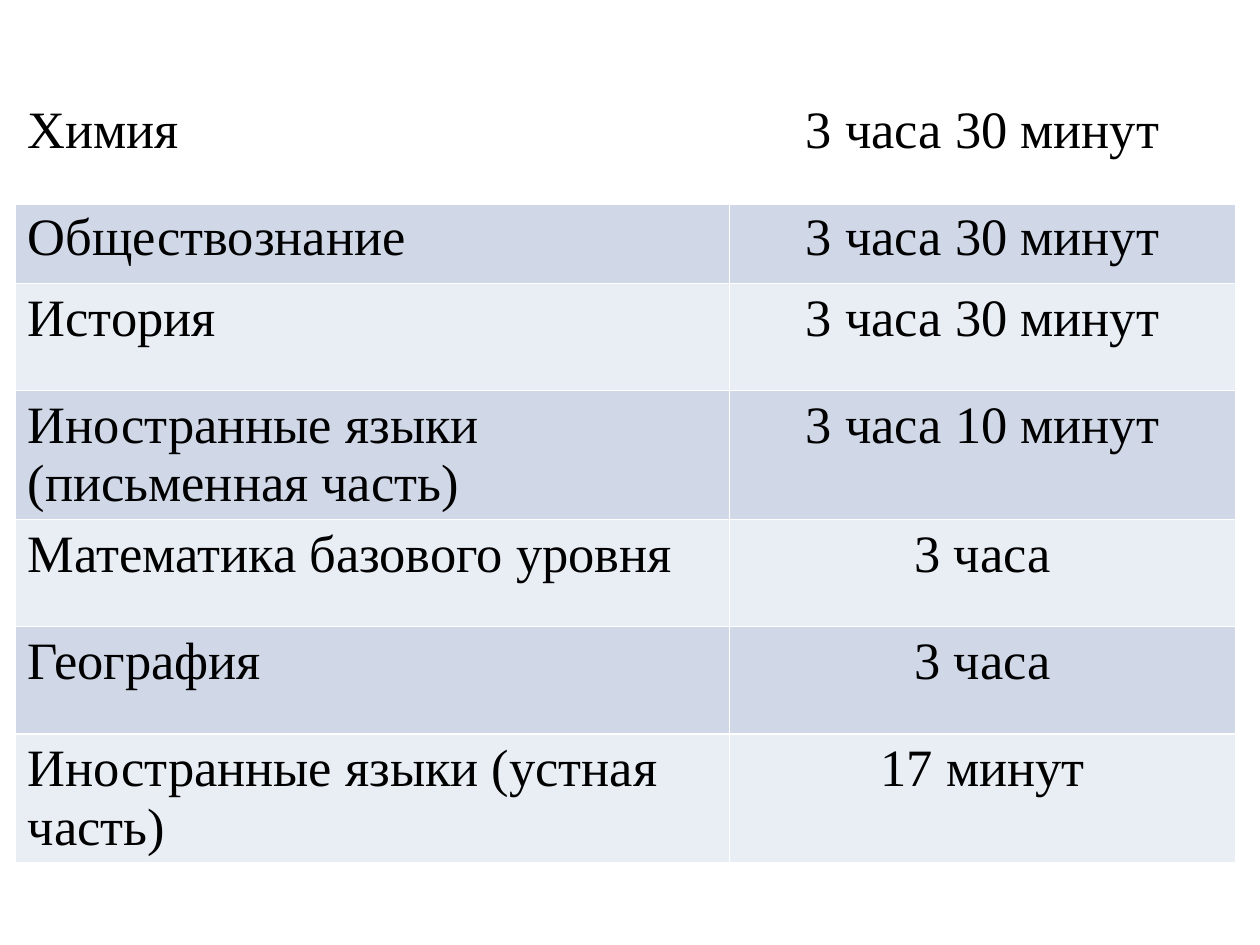
import dataclasses

import pptx
import pptx.dml.color
import pptx.enum.text
import pptx.oxml
import pptx.oxml.ns
import pptx.util


@dataclasses.dataclass(frozen=True)
class Theme:
    font: str = "Times New Roman"
    size: int = 30
    text: str = "000000"
    border: str = "FFFFFF"
    header: str = "FFFFFF"
    bands: tuple = ("D0D8E8", "E9EDF4")
    thin: int = 1
    thick: int = 3


THEME = Theme()
SLIDE_WIDTH, SLIDE_HEIGHT = 10, 7.5
TABLE_LEFT, TABLE_TOP = 0.12, 0.76
COLUMN_WIDTHS = (5.67, 4.02)
ROW_HEIGHT, SHORT_ROW_HEIGHT = 0.85, 0.64
SHORT_ROW = 1
ALIGNMENTS = (
    pptx.enum.text.PP_ALIGN.LEFT,
    pptx.enum.text.PP_ALIGN.CENTER,
)
EXAMS = (
    ("Химия", "3 часа 30 минут"),
    ("Обществознание", "3 часа 30 минут"),
    ("История", "3 часа 30 минут"),
    ("Иностранные языки (письменная часть)", "3 часа 10 минут"),
    ("Математика базового уровня", "3 часа"),
    ("География", "3 часа"),
    ("Иностранные языки (устная часть)", "17 минут"),
)


def color(value):
    return pptx.dml.color.RGBColor.from_string(value)


def apply_format(target, values):
    for name, value in values.items():
        setattr(target, name, value)


def add_borders(cell, widths):
    properties = cell._tc.get_or_add_tcPr()
    namespace = pptx.oxml.ns.nsdecls("a")
    for position, (side, width) in enumerate(widths.items()):
        line = pptx.oxml.parse_xml(
            f'<a:{side} {namespace} w="{pptx.util.Pt(width)}">'
            f'<a:solidFill><a:srgbClr val="{THEME.border}"/></a:solidFill>'
            f"</a:{side}>"
        )
        properties.insert(position, line)


def fill_cell(cell, text, alignment, background, borders):
    cell.fill.solid()
    cell.fill.fore_color.rgb = color(background)
    paragraph = cell.text_frame.paragraphs[0]
    paragraph.alignment = alignment
    run = paragraph.add_run()
    run.text = text
    apply_format(run.font, {
        "name": THEME.font,
        "size": pptx.util.Pt(THEME.size),
        "bold": False,
    })
    run.font.color.rgb = color(THEME.text)
    add_borders(cell, borders)


def row_style(row):
    borders = dict.fromkeys(("lnL", "lnR", "lnT", "lnB"), THEME.thin)
    if row == 0:
        return THEME.header, borders | {"lnB": THEME.thick}
    if row == 1:
        borders["lnT"] = THEME.thick
    return THEME.bands[(row - 1) % len(THEME.bands)], borders


def add_exam_table(slide):
    heights = [ROW_HEIGHT] * len(EXAMS)
    heights[SHORT_ROW] = SHORT_ROW_HEIGHT
    bounds = (TABLE_LEFT, TABLE_TOP, sum(COLUMN_WIDTHS), sum(heights))
    table = slide.shapes.add_table(
        len(EXAMS), len(COLUMN_WIDTHS), *map(pptx.util.Inches, bounds)
    ).table
    for column, width in zip(table.columns, COLUMN_WIDTHS):
        column.width = pptx.util.Inches(width)
    for row, (exam, height) in enumerate(zip(EXAMS, heights)):
        table.rows[row].height = pptx.util.Inches(height)
        background, borders = row_style(row)
        for column, (text, alignment) in enumerate(zip(exam, ALIGNMENTS)):
            fill_cell(table.cell(row, column), text, alignment, background, borders)


def main():
    presentation = pptx.Presentation()
    apply_format(presentation, {
        "slide_width": pptx.util.Inches(SLIDE_WIDTH),
        "slide_height": pptx.util.Inches(SLIDE_HEIGHT),
    })
    slide = presentation.slides.add_slide(presentation.slide_layouts[6])
    add_exam_table(slide)
    presentation.save("out.pptx")


if __name__ == "__main__":
    main()
